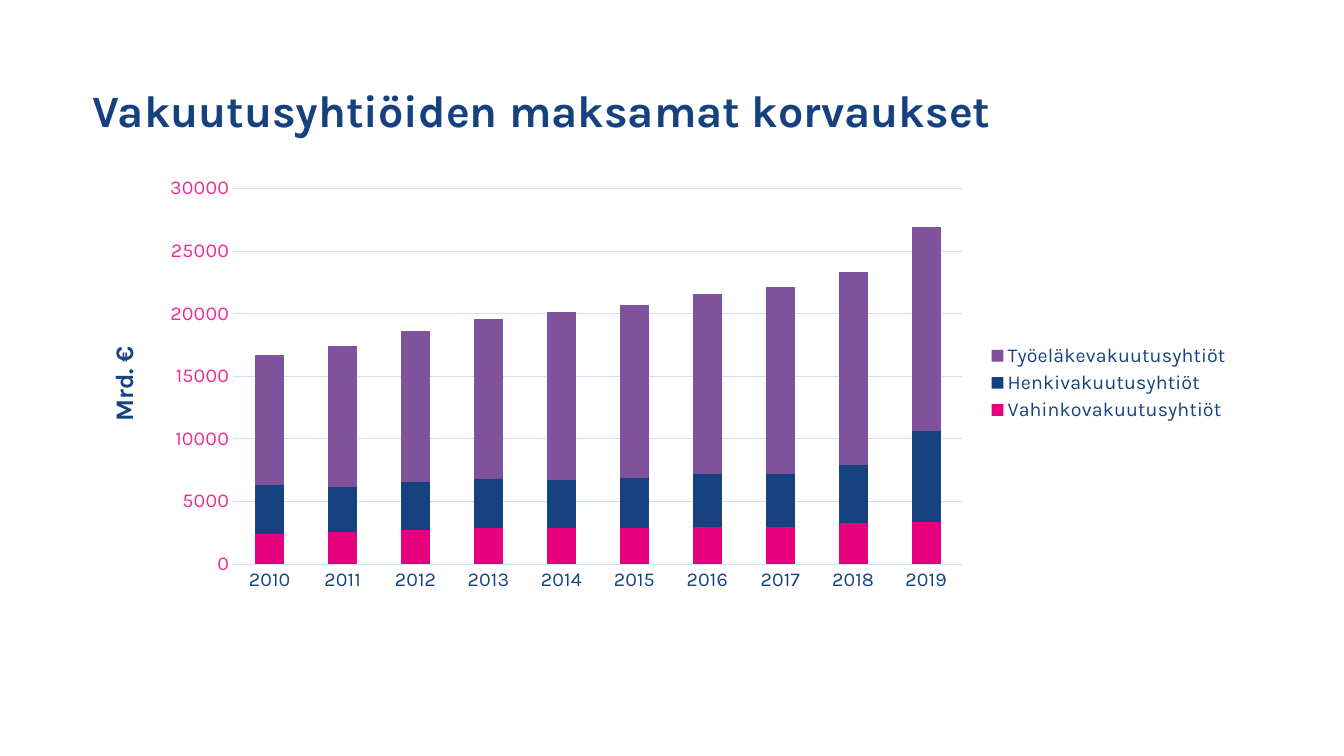
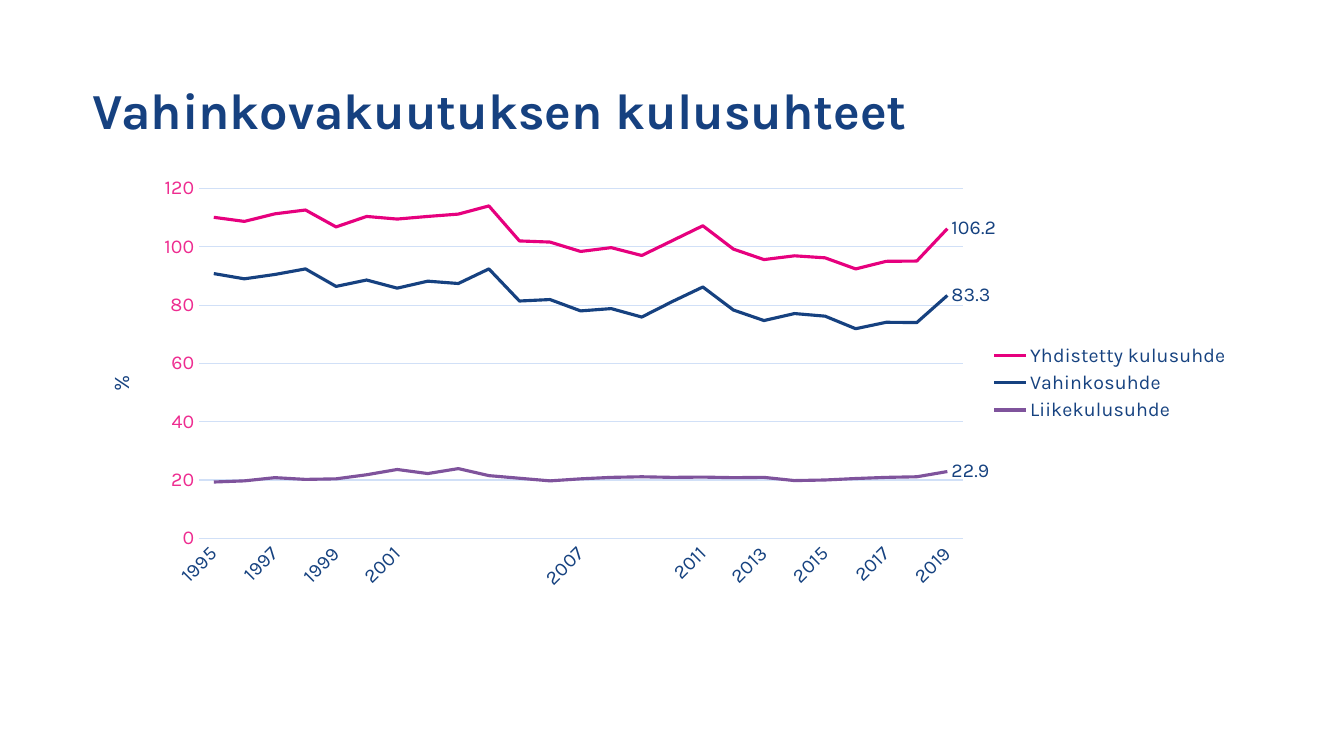
from dataclasses import dataclass

from lxml import etree
from pptx import Presentation
from pptx.chart.axis import ValueAxis
from pptx.chart.chart import Chart
from pptx.chart.data import CategoryChartData
from pptx.chart.series import BarSeries, LineSeries
from pptx.dml.color import RGBColor
from pptx.enum.chart import XL_CHART_TYPE, XL_LABEL_POSITION, XL_LEGEND_POSITION, XL_TICK_MARK
from pptx.enum.text import MSO_ANCHOR, PP_ALIGN
from pptx.oxml.ns import qn
from pptx.slide import Slide
from pptx.text.text import Font
from pptx.util import Inches, Pt

STACK = XL_CHART_TYPE.COLUMN_STACKED
LINE = XL_CHART_TYPE.LINE
NO_TICK = XL_TICK_MARK.NONE
AT_RIGHT = XL_LEGEND_POSITION.RIGHT
LABEL_RIGHT = XL_LABEL_POSITION.RIGHT
MIDDLE = MSO_ANCHOR.MIDDLE
LEFT = PP_ALIGN.LEFT

FACE = "Karla"
COLORS = {
    "navy": "164180",
    "text": "164280",
    "pink": "E6007E",
    "rose": "EE2C90",
    "plum": "7F539C",
    "grid": "D1E0F7",
}
WIDTH, HEIGHT = Inches(13.33), Inches(7.5)
COL, ROW = WIDTH / 65, HEIGHT / 77


@dataclass
class Box:
    col: float
    row: float
    cols: float
    rows: float

    def place(self) -> tuple[int, int, int, int]:
        return (int(self.col * COL), int(self.row * ROW),
                int(self.cols * COL), int(self.rows * ROW))


@dataclass
class Series:
    name: str
    color: str
    values: list[float]


@dataclass
class Page:
    title: str
    size: int
    kind: XL_CHART_TYPE
    unit: str
    unit_size: int
    unit_bold: bool
    format: str
    years: range
    plot: dict[str, float]
    series: list[Series]


TITLE_BOX = Box(4, 4, 56, 15)
CHART_BOX = Box(4, 17, 56, 44)

PAGES = [
    Page("Vakuutusyhtiöiden maksamat korvaukset", 32, STACK, "Mrd. €", 18, True, "General",
         range(2010, 2020), {"x": 0.13, "y": 0.05, "w": 0.63, "h": 0.87}, [
             Series("Vahinkovakuutusyhtiöt", "pink",
                    [2400, 2600, 2700, 2900, 2900, 2900, 3000, 3000, 3300, 3400]),
             Series("Henkivakuutusyhtiöt", "navy",
                    [3900, 3600, 3900, 3900, 3800, 4000, 4200, 4200, 4600, 7200]),
             Series("Työeläkevakuutusyhtiöt", "plum",
                    [10400, 11200, 12000, 12800, 13400, 13800, 14400, 14900, 15400, 16300]),
         ]),
    Page("Vahinkovakuutuksen kulusuhteet", 36, LINE, "%", 16, False, "0",
         range(1995, 2020), {"x": 0.1, "y": 0.05, "w": 0.66, "h": 0.81}, [
             Series("Yhdistetty kulusuhde", "pink",
                    [110.1, 108.7, 111.3, 112.6, 106.8, 110.4, 109.5, 110.4, 111.2,
                     114, 102, 101.6, 98.4, 99.7, 97, 102.1, 107.2, 99.2, 95.6,
                     96.9, 96.2, 92.4, 95, 95.1, 106.2]),
             Series("Vahinkosuhde", "navy",
                    [90.8, 89, 90.5, 92.4, 86.4, 88.6, 85.8, 88.2, 87.4, 92.4, 81.4,
                     81.9, 78, 78.8, 75.9, 81.2, 86.2, 78.3, 74.7, 77.1, 76.2, 71.9,
                     74.1, 74, 83.3]),
             Series("Liikekulusuhde", "plum",
                    [19.3, 19.7, 20.8, 20.2, 20.4, 21.8, 23.6, 22.2, 23.9, 21.5, 20.6,
                     19.7, 20.4, 20.9, 21.1, 20.9, 21, 20.8, 20.9, 19.8, 20, 20.5,
                     20.9, 21.1, 22.9]),
         ]),
]


def tint(name: str) -> RGBColor:
    return RGBColor.from_string(COLORS[name])


def style(font: Font, size: int, color: str, bold: bool = False) -> None:
    font.name, font.size, font.bold = FACE, Pt(size), bold
    font.color.rgb = tint(color)


def add_title(slide: Slide, page: Page) -> None:
    title = slide.shapes.title
    title.left, title.top, title.width, title.height = TITLE_BOX.place()
    frame = title.text_frame
    frame.text = page.title
    frame.vertical_anchor = MIDDLE
    line = frame.paragraphs[0]
    line.alignment, line.line_spacing = LEFT, 0.9
    style(line.runs[0].font, page.size, "navy", True)


def set_plot(chart: Chart, shares: dict[str, float]) -> None:
    area = chart.element.find(".//" + qn("c:plotArea"))
    for old in area.findall(qn("c:layout")):
        area.remove(old)
    layout = etree.Element(qn("c:layout"))
    area.insert(0, layout)
    manual = etree.SubElement(layout, qn("c:manualLayout"))
    parts = {"layoutTarget": "inner", "xMode": "edge", "yMode": "edge", **shares}
    for tag, value in parts.items():
        etree.SubElement(manual, qn("c:" + tag)).set("val", str(value))


def set_unit(axis: ValueAxis, page: Page) -> None:
    frame = axis.axis_title.text_frame
    frame.text = page.unit
    style(frame.paragraphs[0].runs[0].font, page.unit_size, "text", page.unit_bold)


def set_axes(chart: Chart, page: Page) -> None:
    years, scale = chart.category_axis, chart.value_axis
    for axis, color in ((years, "text"), (scale, "rose")):
        axis.major_tick_mark = axis.minor_tick_mark = NO_TICK
        style(axis.tick_labels.font, 14, color)
    scale.has_major_gridlines = True
    for line in (years.format.line, scale.major_gridlines.format.line):
        line.color.rgb, line.width = tint("grid"), Pt(0.75)
    scale.format.line.fill.background()
    scale.tick_labels.number_format = page.format
    scale.tick_labels.number_format_is_linked = False
    set_unit(scale, page)


def paint_bar(bar: BarSeries, color: str) -> None:
    bar.format.fill.solid()
    bar.format.fill.fore_color.rgb = tint(color)


def paint_line(line: LineSeries, color: str, last: int) -> None:
    line.smooth = False
    line.format.line.color.rgb, line.format.line.width = tint(color), Pt(2.25)
    line.data_labels.show_value = False
    label = line.points[last].data_label
    style(label.font, 14, "text")
    label.position = LABEL_RIGHT


def add_chart(slide: Slide, page: Page) -> None:
    data = CategoryChartData()
    data.categories = [str(year) for year in page.years]
    for item in page.series:
        data.add_series(item.name, item.values)
    chart = slide.shapes.add_chart(page.kind, *CHART_BOX.place(), data).chart
    chart.has_title = False
    style(chart.font, 14, "text")
    chart.has_legend = True
    chart.legend.position = AT_RIGHT
    chart.legend.include_in_layout = False
    style(chart.legend.font, 14, "text")
    set_axes(chart, page)
    set_plot(chart, page.plot)
    plot = chart.plots[0]
    plot.vary_by_categories = False
    if page.kind == STACK:
        plot.gap_width, plot.overlap = 150, 100
    for item, drawn in zip(page.series, plot.series):
        if page.kind == STACK:
            paint_bar(drawn, item.color)
        else:
            paint_line(drawn, item.color, len(page.years) - 1)


def main() -> None:
    deck = Presentation()
    deck.slide_width, deck.slide_height = WIDTH, HEIGHT
    for page in PAGES:
        slide = deck.slides.add_slide(deck.slide_layouts[5])
        add_title(slide, page)
        add_chart(slide, page)
    deck.save("out.pptx")


if __name__ == "__main__":
    main()
